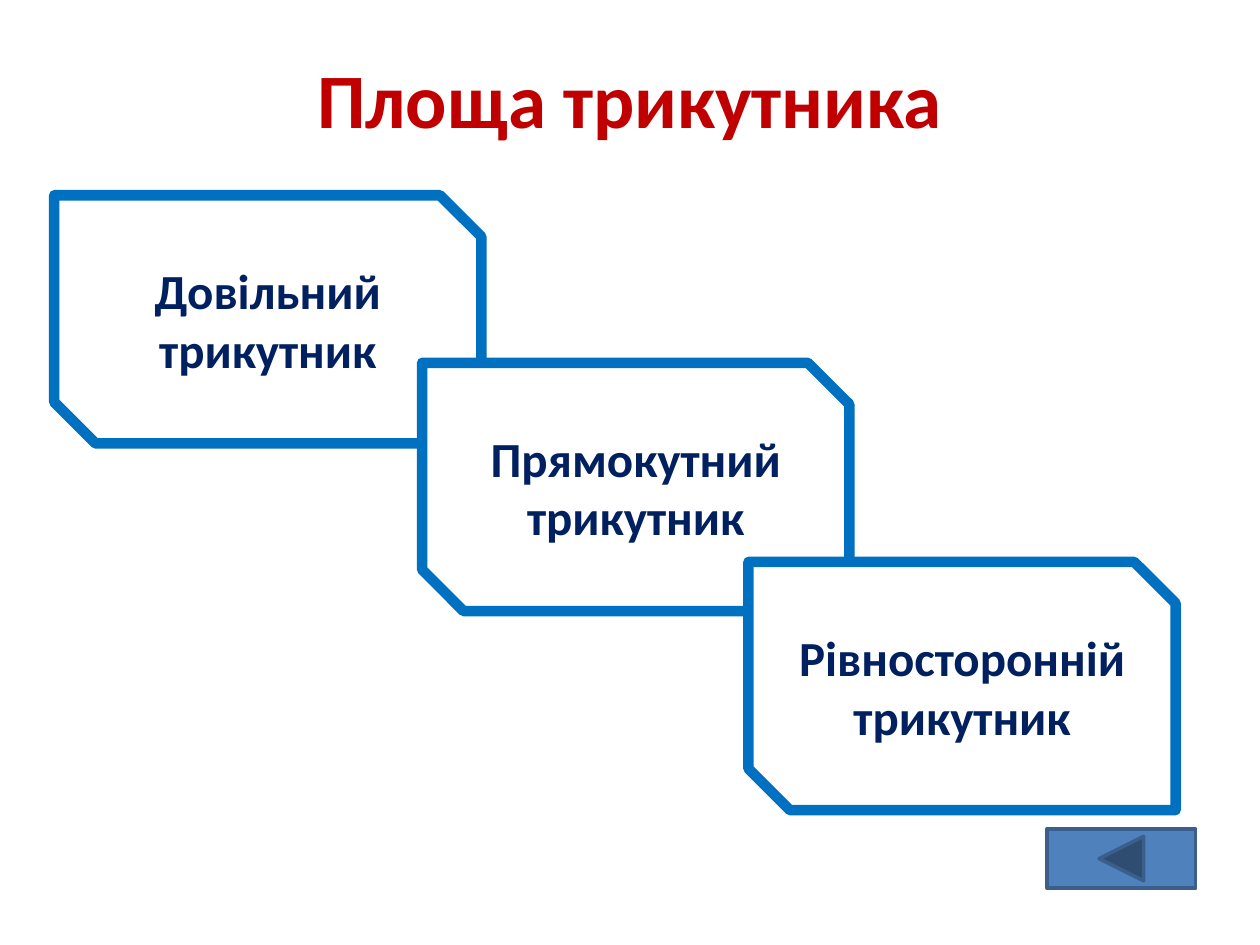
from pptx import Presentation
from pptx.dml.color import RGBColor
from pptx.enum.shapes import MSO_SHAPE
from pptx.enum.text import MSO_ANCHOR, PP_ALIGN
from pptx.util import Inches, Pt

SNIP = MSO_SHAPE.SNIP_2_DIAG_RECTANGLE
BACK = MSO_SHAPE.ACTION_BUTTON_BACK_OR_PREVIOUS
CENTER = PP_ALIGN.CENTER
MIDDLE = MSO_ANCHOR.MIDDLE

RED = RGBColor(0xC0, 0x00, 0x00)
WHITE = RGBColor(0xFF, 0xFF, 0xFF)
BLUE = RGBColor(0x00, 0x70, 0xC0)
NAVY = RGBColor(0x00, 0x20, 0x60)
STEEL = RGBColor(0x4F, 0x81, 0xBD)
EDGE = RGBColor(0x3A, 0x5F, 0x8C)

TITLE = "Площа трикутника"
CARDS = [
    ("Довільний трикутник", 0.43, 1.55),
    ("Прямокутний трикутник", 3.35, 2.88),
    ("Рівносторонній трикутник", 5.94, 4.46),
]
CARD_W, CARD_H = 3.39, 1.97


def write(shape, text, size, color):
    frame = shape.text_frame
    frame.word_wrap = True
    frame.vertical_anchor = MIDDLE
    para = frame.paragraphs[0]
    para.alignment = CENTER
    run = para.add_run()
    run.text = text
    font = run.font
    font.name, font.size, font.bold = "Calibri", Pt(size), True
    font.color.rgb = color


def add_box(slide, kind, place, fill, line, width):
    box = slide.shapes.add_shape(kind, *map(Inches, place))
    box.shadow.inherit = False
    box.fill.solid()
    box.fill.fore_color.rgb = fill
    box.line.color.rgb = line
    box.line.width = Pt(width)
    return box


def main():
    deck = Presentation()
    deck.slide_width, deck.slide_height = Inches(10), Inches(7.5)
    slide = deck.slides.add_slide(deck.slide_layouts[5])

    title = slide.shapes.title
    title.left, title.top = Inches(0.5), Inches(0.3)
    title.width, title.height = Inches(9), Inches(0.95)
    write(title, TITLE, 44, RED)

    for text, left, top in CARDS:
        place = (left, top, CARD_W, CARD_H)
        card = add_box(slide, SNIP, place, WHITE, BLUE, 6)
        write(card, text, 28, NAVY)

    add_box(slide, BACK, (8.31, 6.58, 1.18, 0.47), STEEL, EDGE, 2)
    deck.save("out.pptx")


if __name__ == "__main__":
    main()
